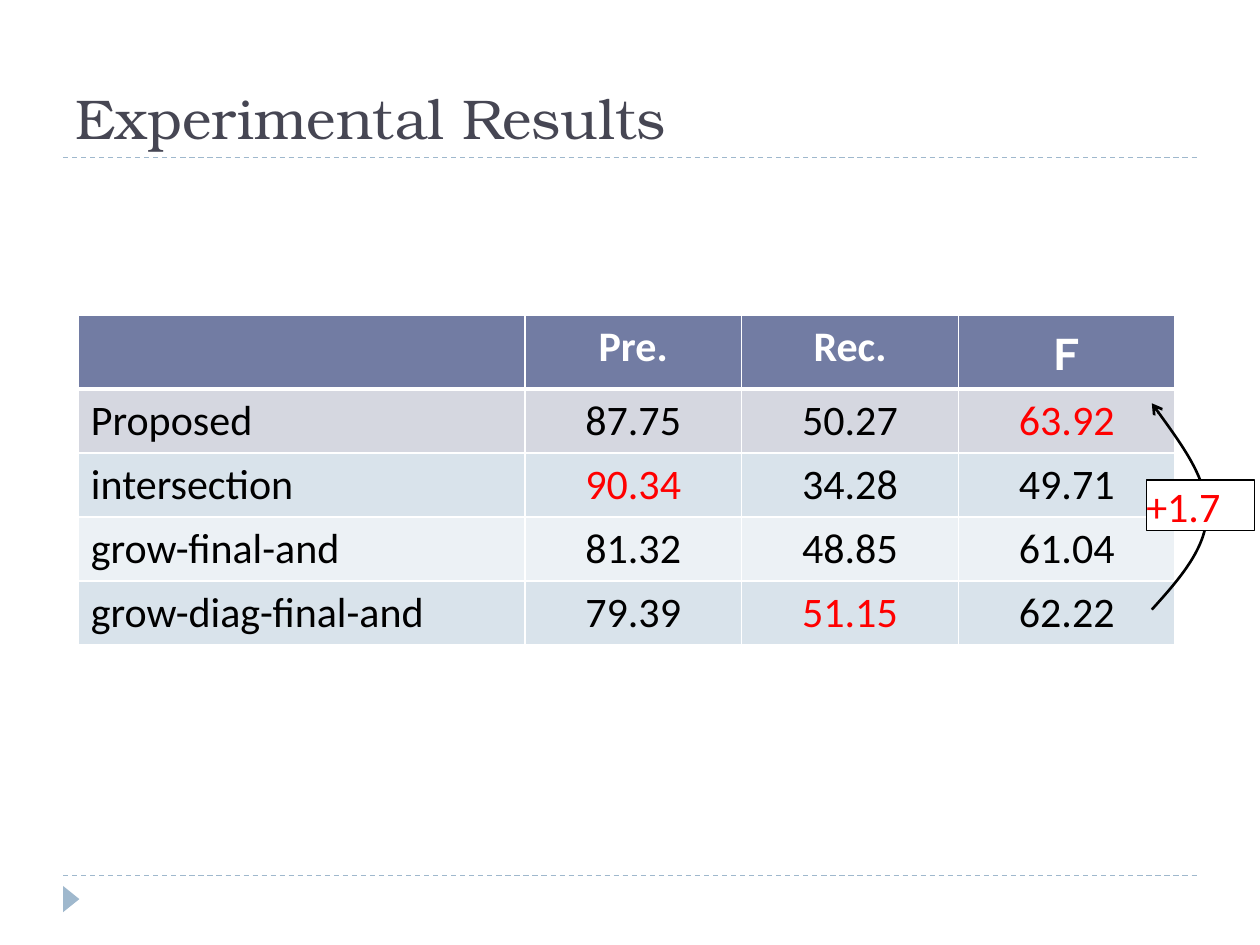
from lxml import etree
from pptx import Presentation
from pptx import util as u
from pptx.dml.color import RGBColor
from pptx.enum import dml, shapes, text
from pptx.oxml import ns

Cm, Pt = u.Cm, u.Pt
hue = RGBColor.from_string


def write(par, words, font, size, tint, bold=False):
    run = par.add_run()
    run.text = words
    run.font.name, run.font.size, run.font.bold = font, Pt(size), bold
    run.font.color.rgb = hue(tint)


def sub(node, tag, **attrs):
    return etree.SubElement(node, ns.qn(tag), attrs)


deck = Presentation()
deck.slide_width, deck.slide_height = Cm(25.4), Cm(19.05)
slide = deck.slides.add_slide(deck.slide_layouts[5])
parts = slide.shapes

# Dashed rules under the title and above the footer
for y in (17.65, 3.18):
    rule = parts.add_connector(shapes.MSO_CONNECTOR.STRAIGHT,
                               Cm(1.27), Cm(y), Cm(24.13), Cm(y))
    rule.line.color.rgb = hue("9FB8CD")
    rule.line.width = Pt(0.75)
    rule.line.dash_style = dml.MSO_LINE.DASH
    sub(rule._element.spPr, "a:effectLst")

# Footer marker
mark = parts.add_shape(shapes.MSO_SHAPE.ISOSCELES_TRIANGLE,
                       Cm(1.17), Cm(17.96), Cm(0.53), Cm(0.33))
mark.rotation = 90
mark.shadow.inherit = False
mark.fill.solid()
mark.fill.fore_color.rgb = hue("9FB8CD")
mark.line.fill.background()

# Title
title = parts.title
title.left, title.top = Cm(1.27), Cm(0.43)
title.width, title.height = Cm(22.86), Cm(2.74)
frame = title.text_frame
frame.vertical_anchor = text.MSO_ANCHOR.BOTTOM
frame.paragraphs[0].alignment = text.PP_ALIGN.LEFT
write(frame.paragraphs[0], "Experimental Results", "TeX Gyre Bonum", 32, "464653")

# Results table: best score of each column in red
data = [
    ["", "Pre.", "Rec.", "Ｆ"],
    ["Proposed", "87.75", "50.27", "63.92"],
    ["intersection", "90.34", "34.28", "49.71"],
    ["grow-final-and", "81.32", "48.85", "61.04"],
    ["grow-diag-final-and", "79.39", "51.15", "62.22"],
]
best = [max(col[1:]) for col in zip(*data)]
fills = ["727CA3", "D5D7E0", "D9E3EB", "ECF1F5", "D9E3EB"]
wide = [9, 4.37, 4.37, 4.37]
high = [1.47] + [1.29] * 4
grid = parts.add_table(5, 4, Cm(1.58), Cm(6.36), Cm(sum(wide)), Cm(sum(high))).table
for col, w in zip(grid.columns, wide):
    col.width = Cm(w)
for r, row in enumerate(data):
    grid.rows[r].height = Cm(high[r])
    for c, words in enumerate(row):
        cell = grid.cell(r, c)
        # Borders go in before the fill; the line below the header is thicker
        props = cell._tc.get_or_add_tcPr()
        for side in "LRTB":
            thick = (r, side) in ((0, "B"), (1, "T"))
            edge = sub(props, f"a:ln{side}", w=str(Pt(3 if thick else 1)))
            sub(sub(edge, "a:solidFill"), "a:srgbClr", val="FFFFFF")
        cell.fill.solid()
        cell.fill.fore_color.rgb = hue(fills[r])
        par = cell.text_frame.paragraphs[0]
        if c:
            par.alignment = text.PP_ALIGN.CENTER
        if r == 0:
            tint = "FFFFFF"
        else:
            tint = "FF0000" if c and words == best[c] else "000000"
        if words:
            write(par, words, "Calibri", 24, tint, r == 0)
        else:
            par.font.size = Pt(24)

# Curved arrow from the last row to the first: two Bezier arcs
start, *rest = [(Cm(x), Cm(y)) for x, y in (
    (23.22, 12.29), (23.77, 11.68), (24.33, 11.05), (24.33, 10.34),
    (24.33, 9.65), (23.77, 8.89), (23.22, 8.13))]
pen = parts.build_freeform(*start)
pen.add_line_segments(rest, close=False)
curve = pen.convert_to_shape()
steps = curve._element.xpath(".//a:lnTo")
for i in (0, 3):
    arc = etree.Element(ns.qn("a:cubicBezTo"))
    steps[i].addprevious(arc)
    for step in steps[i:i + 3]:
        arc.append(step[0])
        step.getparent().remove(step)
curve.shadow.inherit = False
curve.fill.background()
curve.line.color.rgb = hue("000000")
curve.line.width = Pt(1.5)
sub(curve.line._get_or_add_ln(), "a:tailEnd", type="arrow")

# Gain label
gain = parts.add_shape(shapes.MSO_SHAPE.RECTANGLE,
                       Cm(23.11), Cm(9.68), Cm(2.18), Cm(1.02))
gain.shadow.inherit = False
gain.fill.solid()
gain.fill.fore_color.rgb = hue("FFFFFF")
gain.line.color.rgb = hue("000000")
gain.line.width = Pt(0.75)
frame = gain.text_frame
frame.margin_left = frame.margin_right = frame.margin_top = frame.margin_bottom = 0
frame.word_wrap = True
frame.auto_size = text.MSO_AUTO_SIZE.SHAPE_TO_FIT_TEXT
frame.vertical_anchor = text.MSO_ANCHOR.TOP
frame.paragraphs[0].alignment = text.PP_ALIGN.LEFT
write(frame.paragraphs[0], "+1.7", "Calibri", 24, "FF0000")

deck.save("out.pptx")
